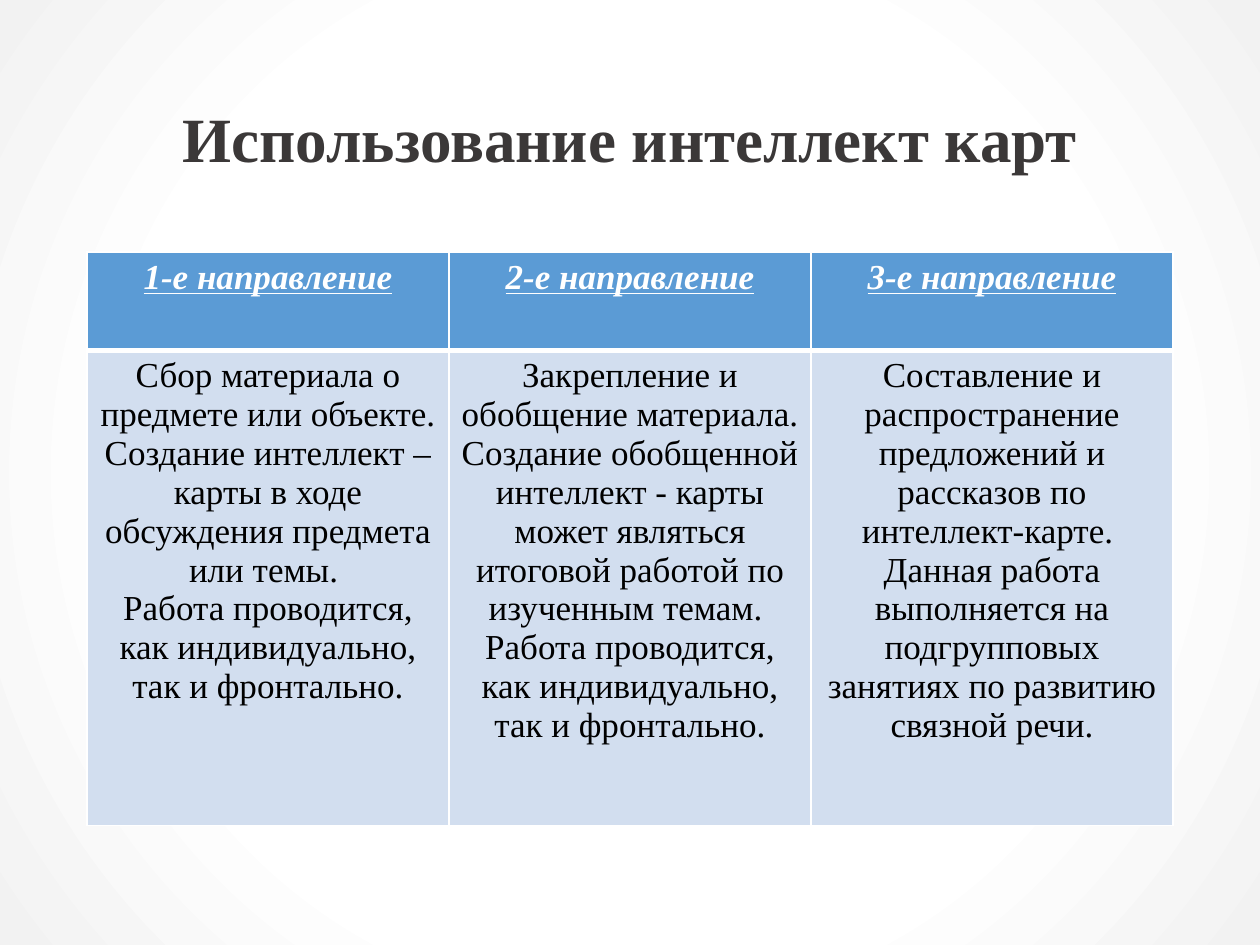
from pptx import Presentation
from pptx.dml.color import RGBColor
from pptx.enum.text import MSO_ANCHOR, PP_ALIGN
from pptx.oxml import parse_xml
from pptx.oxml.ns import nsdecls, qn
from pptx.util import Inches, Pt

CENTER = PP_ALIGN.CENTER
MIDDLE = MSO_ANCHOR.MIDDLE
FONT = "Times New Roman"
LEFT, WIDTH = 0.69, 8.62
ROW_HEIGHTS = (0.78, 3.77)
WORK_MODE = "Работа проводится, как индивидуально, так и фронтально."
DIRECTIONS = [
    ("1-е направление", [
        "Сбор материала о предмете или объекте. ",
        "Создание интеллект – карты в ходе обсуждения предмета или темы. ",
        WORK_MODE,
    ]),
    ("2-е направление", [
        "Закрепление и обобщение материала. ",
        "Создание обобщенной интеллект - карты может являться итоговой "
        "работой по изученным темам. ",
        WORK_MODE,
    ]),
    ("3-е направление", [
        "Составление и распространение предложений и рассказов по "
        "интеллект-карте. ",
        "Данная работа выполняется на подгрупповых занятиях по развитию "
        "связной речи.",
    ]),
]


def color(value):
    """Return the colour for a hex string."""
    return RGBColor.from_string(value)


def style_paragraph(para, size, value, bold=False, emphasis=False):
    """Centre a paragraph and set its font."""
    para.alignment = CENTER
    font = para.font
    font.name, font.size, font.bold = FONT, Pt(size), bold
    font.italic = font.underline = emphasis
    font.color.rgb = color(value)


def paint_background(slide):
    """Fill the background with a soft gradient from the centre outwards."""
    fill = slide.background.fill
    fill.gradient()
    for stop, (position, value) in zip(
            fill.gradient_stops, [(0.63, "FFFFFF"), (1, "F2F2F2")]):
        stop.position = position
        stop.color.rgb = color(value)
    gradient = slide.element.find(".//" + qn("a:gradFill"))
    linear = gradient.find(qn("a:lin"))
    gradient.replace(linear, parse_xml(
        f'<a:path {nsdecls("a")} path="circle">'
        '<a:fillToRect l="50000" t="50000" r="50000" b="50000"/></a:path>'))


def add_title(slide, text):
    """Place and format the slide title."""
    title = slide.shapes.title
    title.left, title.top = Inches(LEFT), Inches(0.4)
    title.width, title.height = Inches(WIDTH), Inches(1.45)
    frame = title.text_frame
    frame.text = text
    frame.vertical_anchor = MIDDLE
    para = frame.paragraphs[0]
    para.line_spacing = 0.9
    style_paragraph(para, 36, "3B3838", bold=True)


def set_borders(cell, widths):
    """Draw white borders with the given width in points for each side."""
    properties = cell._tc.get_or_add_tcPr()
    for side, width in widths.items():
        properties.append(parse_xml(
            f'<a:ln{side} {nsdecls("a")} w="{Pt(width)}"><a:solidFill>'
            f'<a:srgbClr val="FFFFFF"/></a:solidFill></a:ln{side}>'))


def fill_cell(cell, lines, is_header):
    """Write the paragraphs of a cell and set its fill and borders."""
    top, bottom = (1, 3) if is_header else (3, 1)
    set_borders(cell, {"L": 1, "R": 1, "T": top, "B": bottom})
    cell.fill.solid()
    cell.fill.fore_color.rgb = color("5B9BD5" if is_header else "D2DEEF")
    cell.text = "\n".join(lines)
    for para in cell.text_frame.paragraphs:
        style_paragraph(para, 20, "FFFFFF" if is_header else "000000",
                        bold=is_header, emphasis=is_header)


def add_directions_table(slide):
    """Add the table with one column for each direction."""
    table = slide.shapes.add_table(
        len(ROW_HEIGHTS), len(DIRECTIONS), Inches(LEFT), Inches(2),
        Inches(WIDTH), Inches(sum(ROW_HEIGHTS))).table
    for row, height in zip(table.rows, ROW_HEIGHTS):
        row.height = Inches(height)
    for column, (heading, lines) in enumerate(DIRECTIONS):
        fill_cell(table.cell(0, column), [heading], True)
        fill_cell(table.cell(1, column), lines, False)


def main():
    """Build the slide and save the deck."""
    deck = Presentation()
    deck.slide_width, deck.slide_height = Inches(10), Inches(7.5)
    slide = deck.slides.add_slide(deck.slide_layouts.get_by_name("Title Only"))
    paint_background(slide)
    add_title(slide, "Использование интеллект карт")
    add_directions_table(slide)
    deck.save("out.pptx")


if __name__ == "__main__":
    main()
